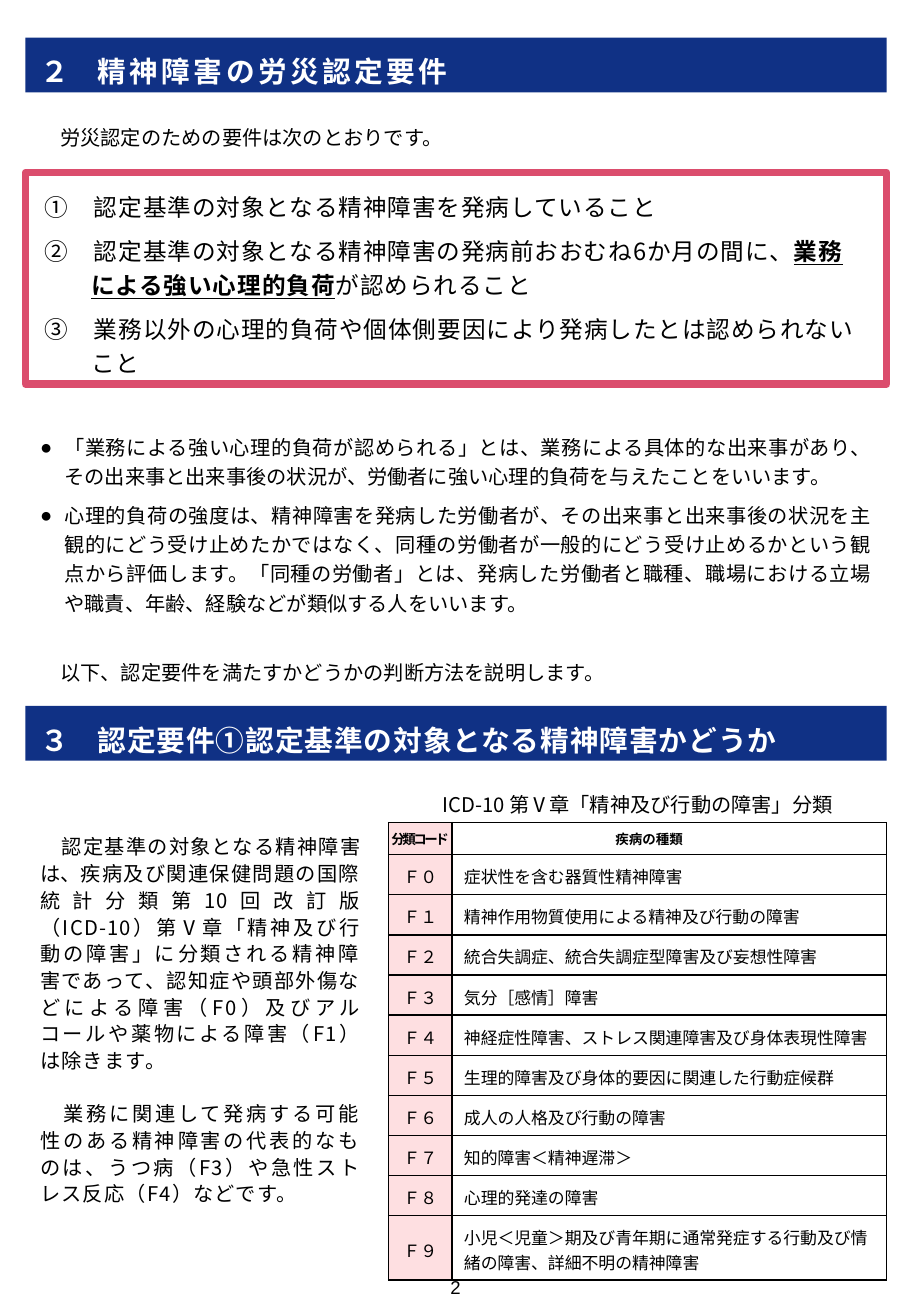
from dataclasses import dataclass

from lxml.etree import SubElement
from pptx import Presentation
from pptx.dml.color import RGBColor
from pptx.enum.shapes import MSO_SHAPE as Shape
from pptx.enum.text import MSO_ANCHOR as Anchor, MSO_AUTO_SIZE as AutoSize, PP_ALIGN as Align
from pptx.oxml import parse_xml
from pptx.oxml.ns import nsdecls, qn
from pptx.util import Inches, Pt


@dataclass(frozen=True)
class Theme:
    font: str = "Noto Sans CJK JP"
    number_font: str = "Arial"
    ink: str = "000000"
    paper: str = "FFFFFF"
    navy: str = "103185"
    rose: str = "DB4D6D"
    blush: str = "FEDFE1"
    heading: float = 17
    requirement: float = 14
    body: float = 12
    number: float = 11
    cell: float = 10
    header: float = 8


@dataclass(frozen=True)
class Box:
    left: float
    top: float
    width: float
    height: float

    def lengths(self):
        return [Inches(n) for n in (self.left, self.top, self.width, self.height)]


THEME = Theme()
LEFT, WIDTH = 0.21, 7.09
TEXT_INSETS = (0.12, 0.08, 0.12, 0.05)
CELL_INSETS = (0.1, 0.08, 0.1, 0.05)

REQUIREMENTS = [
    (0.09, [("①　認定基準の対象となる精神障害を発病していること", {})]),
    (0.38, [("②　認定基準の対象となる精神障害の発病前おおむね6か月の間に、", {}),
            ("業務による強い心理的負荷", {"bold": True, "underline": True}),
            ("が認められること", {})]),
    (0.38, [("③　業務以外の心理的負荷や個体側要因により発病したとは認められないこと", {})]),
]
NOTES = [
    "「業務による強い心理的負荷が認められる」とは、業務による具体的な出来事があり、"
    "その出来事と出来事後の状況が、労働者に強い心理的負荷を与えたことをいいます。",
    "心理的負荷の強度は、精神障害を発病した労働者が、その出来事と出来事後の状況を"
    "主観的にどう受け止めたかではなく、同種の労働者が一般的にどう受け止めるかという"
    "観点から評価します。「同種の労働者」とは、発病した労働者と職種、職場における立場や"
    "職責、年齢、経験などが類似する人をいいます。",
]
SCOPE_START = "　認定基準の対象となる精神障害は、"
SCOPE_REST = (
    "疾病及び関連保健問題の国際統計分類第10回改訂版（ICD-10）第Ⅴ章「精神及び行動の障害」に"
    "分類される精神障害であって、認知症や頭部外傷などによる障害（F0）及びアルコールや薬物による"
    "障害（F1）は除きます。")
EXAMPLES = ("　業務に関連して発病する可能性のある精神障害の代表的なものは、"
            "うつ病（F3）や急性ストレス反応（F4）などです。")
DISORDERS = {
    "Ｆ０": "症状性を含む器質性精神障害",
    "Ｆ１": "精神作用物質使用による精神及び行動の障害",
    "Ｆ２": "統合失調症、統合失調症型障害及び妄想性障害",
    "Ｆ３": "気分［感情］障害",
    "Ｆ４": "神経症性障害、ストレス関連障害及び身体表現性障害",
    "Ｆ５": "生理的障害及び身体的要因に関連した行動症候群",
    "Ｆ６": "成人の人格及び行動の障害",
    "Ｆ７": "知的障害＜精神遅滞＞",
    "Ｆ８": "心理的発達の障害",
    "Ｆ９": "小児＜児童＞期及び青年期に通常発症する行動及び情緒の障害、詳細不明の精神障害",
}


def add_span(para, text, size=THEME.body, color=THEME.ink, font=THEME.font,
             bold=False, underline=False, spacing=0):
    span = para.add_run()
    span.text = text
    style = span.font
    style.size, style.bold, style.underline = Pt(size), bold, underline
    style.color.rgb = RGBColor.from_string(color)
    style.name = font
    props = style._element
    SubElement(props, qn("a:ea")).set("typeface", font)
    props.set("spc", str(round(spacing * 100)))


def format_para(para, align=Align.LEFT, line=1.0, before=0, hang=0, bullet=None):
    para.alignment, para.line_spacing = align, line
    para.space_before, para.space_after = Pt(before), Pt(0)
    props = para._p.get_or_add_pPr()
    props.set("marL", str(Inches(hang)))
    props.set("indent", str(Inches(-hang)))
    if bullet:
        SubElement(props, qn("a:buChar")).set("char", bullet)


def prepare_frame(frame, insets):
    frame.word_wrap, frame.auto_size = True, AutoSize.NONE
    frame.vertical_anchor = Anchor.TOP
    (frame.margin_left, frame.margin_top,
     frame.margin_right, frame.margin_bottom) = [Inches(n) for n in insets]
    return frame


def next_para(frame, first):
    return frame.paragraphs[0] if first else frame.add_paragraph()


def place(shape, box):
    shape.left, shape.top, shape.width, shape.height = box.lengths()


def add_text(slide, box, text, align=Align.LEFT, line=1.1, insets=TEXT_INSETS, **style):
    frame = prepare_frame(slide.shapes.add_textbox(*box.lengths()).text_frame, insets)
    format_para(frame.paragraphs[0], align, line)
    add_span(frame.paragraphs[0], text, **style)


def add_rectangle(slide, box):
    shape = slide.shapes.add_shape(Shape.RECTANGLE, *box.lengths())
    shape.shadow.inherit = False
    return shape


def fill_heading(shape, number, text, spacing):
    shape.fill.solid()
    shape.fill.fore_color.rgb = RGBColor.from_string(THEME.navy)
    shape.line.fill.background()
    para = prepare_frame(shape.text_frame, (0.12, 0.08, 0.12, 0.04)).paragraphs[0]
    format_para(para, line=1.2)
    style = {"size": THEME.heading, "color": THEME.paper, "bold": True}
    add_span(para, number + "　", **style)
    add_span(para, text, spacing=spacing, **style)


def add_requirements(slide, box):
    frame_shape = add_rectangle(slide, box)
    frame_shape.fill.background()
    frame_shape.line.color.rgb = RGBColor.from_string(THEME.rose)
    frame_shape.line.width = Pt(4.5)
    frame = prepare_frame(frame_shape.text_frame, (0.16, 0.12, 0.2, 0.05))
    for index, (hang, spans) in enumerate(REQUIREMENTS):
        para = next_para(frame, index == 0)
        format_para(para, line=1.2, before=6, hang=hang)
        for text, style in spans:
            add_span(para, text, size=THEME.requirement, spacing=0.5, **style)


def fill_notes(shape, box):
    place(shape, box)
    frame = prepare_frame(shape.text_frame, TEXT_INSETS)
    for index, text in enumerate(NOTES):
        para = next_para(frame, index == 0)
        format_para(para, Align.JUSTIFY, 1.2, before=6, hang=0.2, bullet="●")
        add_span(para, text)


def add_scope(slide, box):
    frame = prepare_frame(slide.shapes.add_textbox(*box.lengths()).text_frame, TEXT_INSETS)
    scope, examples = frame.paragraphs[0], frame.add_paragraph()
    format_para(scope, Align.JUSTIFY, 1.1)
    add_span(scope, SCOPE_START)
    add_span(scope, SCOPE_REST, spacing=0.7)
    format_para(examples, Align.JUSTIFY, 1.1, before=15.8)
    add_span(examples, EXAMPLES, spacing=0.7)


def fill_cell(cell, text, fill, align, insets=CELL_INSETS, **style):
    cell.fill.solid()
    cell.fill.fore_color.rgb = RGBColor.from_string(fill)
    cell.vertical_anchor = Anchor.MIDDLE
    (cell.margin_left, cell.margin_top,
     cell.margin_right, cell.margin_bottom) = [Inches(n) for n in insets]
    para = cell.text_frame.paragraphs[0]
    format_para(para, align)
    add_span(para, text, **style)
    props = cell._tc.get_or_add_tcPr()
    for index, side in enumerate("LRTB"):
        props.insert(index, parse_xml(
            f'<a:ln{side} {nsdecls("a")} w="{Pt(1)}"><a:solidFill>'
            f'<a:srgbClr val="{THEME.ink}"/></a:solidFill></a:ln{side}>'))


def add_classification(slide, box):
    heights = [0.23] + [0.32] * 4 + [0.28] + [0.32] * 4 + [0.43]
    table = slide.shapes.add_table(len(heights), 2, *box.lengths()).table
    for column, width in zip(table.columns, (0.52, box.width - 0.52)):
        column.width = Inches(width)
    for row, height in zip(table.rows, heights):
        row.height = Inches(height)
    header = {"size": THEME.header, "bold": True}
    fill_cell(table.cell(0, 0), "分類コード", THEME.blush, Align.CENTER, (0, 0, 0, 0),
              spacing=-1.5, **header)
    fill_cell(table.cell(0, 1), "疾病の種類", THEME.paper, Align.CENTER,
              (0.1, 0.05, 0.43, 0.05), **header)
    for row, (code, name) in enumerate(DISORDERS.items(), start=1):
        fill_cell(table.cell(row, 0), code, THEME.blush, Align.CENTER, size=THEME.cell)
        fill_cell(table.cell(row, 1), name, THEME.paper, Align.LEFT, size=THEME.cell)


def build_requirements_slide(deck):
    slide = deck.slides.add_slide(deck.slide_layouts[1])
    # Section 2: requirements
    title, notes = slide.placeholders
    place(title, Box(LEFT, 0.31, WIDTH, 0.45))
    fill_heading(title, "２", "精神障害の労災認定要件", 2)
    add_text(slide, Box(LEFT, 0.93, WIDTH, 0.35), "　労災認定のための要件は次のとおりです。")
    add_requirements(slide, Box(LEFT, 1.42, WIDTH, 1.74))
    fill_notes(notes, Box(LEFT, 3.46, WIDTH, 1.66))
    add_text(slide, Box(LEFT, 5.33, WIDTH, 0.35),
             "　以下、認定要件を満たすかどうかの判断方法を説明します。")
    # Section 3: scope and classification table
    fill_heading(add_rectangle(slide, Box(LEFT, 5.81, WIDTH, 0.45)), "３",
                 "認定要件①認定基準の対象となる精神障害かどうか", 0.5)
    add_scope(slide, Box(LEFT, 6.77, 2.88, 3.26))
    add_text(slide, Box(3.2, 6.44, 4.1, 0.33),
             "ICD-10 第Ⅴ章「精神及び行動の障害」分類", Align.CENTER, 1.0)
    add_classification(slide, Box(3.2, 6.77, 4.1, 3.52))
    # Page number
    add_text(slide, Box(2.79, 10.45, 1.92, 0.32), "2", Align.CENTER, 1.0,
             (0.1, 0.05, 0.1, 0.05), size=THEME.number, font=THEME.number_font)


def main():
    deck = Presentation()
    deck.slide_width, deck.slide_height = Inches(7.5), Inches(10.83)
    build_requirements_slide(deck)
    deck.save("out.pptx")


if __name__ == "__main__":
    main()
